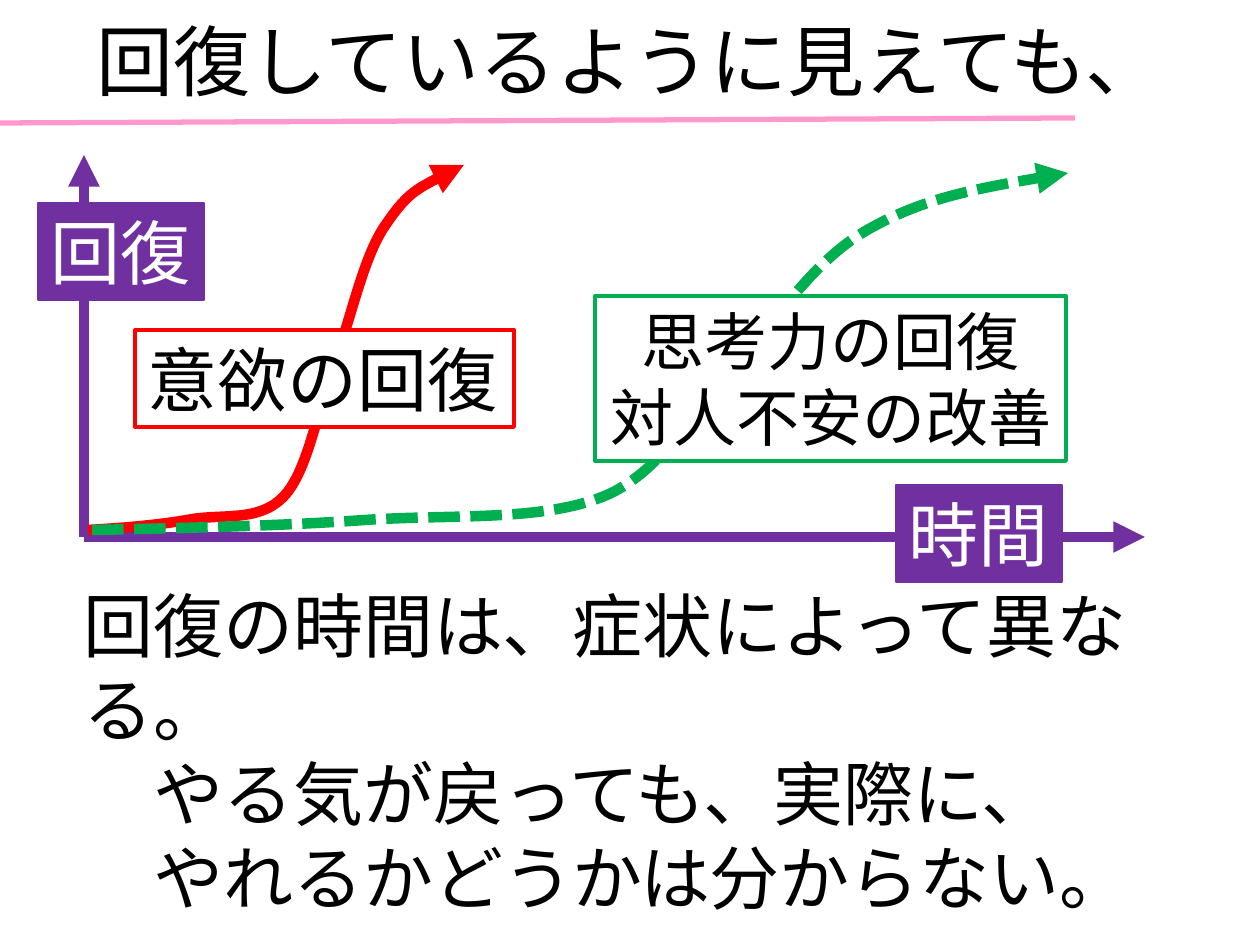
"""Build a slide that sketches how motivation and thinking recover over time."""
from lxml import etree
from pptx import Presentation
from pptx.dml.color import RGBColor
from pptx.enum.dml import MSO_LINE
from pptx.enum.shapes import MSO_CONNECTOR, MSO_SHAPE
from pptx.enum.text import MSO_ANCHOR, PP_ALIGN
from pptx.oxml.ns import qn
from pptx.util import Pt

PX = 7257
STRAIGHT = MSO_CONNECTOR.STRAIGHT
RECTANGLE = MSO_SHAPE.RECTANGLE
MIDDLE = MSO_ANCHOR.MIDDLE
LEFT, CENTER = PP_ALIGN.LEFT, PP_ALIGN.CENTER
DOTTED = MSO_LINE.SQUARE_DOT
COLORS = {
    "black": "000000",
    "white": "FFFFFF",
    "pink": "FF99CC",
    "purple": "7030A0",
    "red": "FF0000",
    "green": "00B050",
}


def style_line(shape, color, width, arrow=False):
    shape.line.color.rgb = RGBColor.from_string(COLORS[color])
    shape.line.width = Pt(width)
    if arrow:
        etree.SubElement(shape.line._get_or_add_ln(), qn("a:tailEnd"), type="triangle")


def write_text(shape, lines, size, font, color, alignment=LEFT):
    frame = shape.text_frame
    frame.vertical_anchor = MIDDLE
    frame.text = "\n".join(lines)
    for paragraph in frame.paragraphs:
        paragraph.alignment = alignment
        paragraph.font.size = Pt(size)
        paragraph.font.name = font
        paragraph.font.color.rgb = RGBColor.from_string(COLORS[color])
        for run in paragraph.runs:
            properties = run._r.get_or_add_rPr()
            for tag in ("a:latin", "a:ea"):
                etree.SubElement(properties, qn(tag), typeface=font)


presentation = Presentation()
presentation.slide_width = 1260 * PX
presentation.slide_height = 945 * PX
slide = presentation.slides.add_slide(presentation.slide_layouts[6])
shapes = slide.shapes

straight_lines = [
    (0, 123, 1075, 118, "pink", 3, False),
    (84, 537, 1145, 537, "purple", 6, True),
    (84, 537, 84, 155, "purple", 6, True),
]
for x1, y1, x2, y2, color, width, arrow in straight_lines:
    connector = shapes.add_connector(STRAIGHT, x1 * PX, y1 * PX, x2 * PX, y2 * PX)
    style_line(connector, color, width, arrow)
    etree.SubElement(connector._element.spPr, qn("a:effectLst"))

title = shapes.add_textbox(84 * PX, 0, 1157 * PX, 120 * PX)
title.text_frame.word_wrap = True
write_text(title, ["回復しているように見えても、"], 44, "Noto Sans CJK JP", "black")

message = shapes.add_textbox(71 * PX, 606 * PX, 1133 * PX, 289 * PX)
message.text_frame.word_wrap = True
message_lines = [
    "回復の時間は、症状によって異なる。",
    "やる気が戻っても、実際に、",
    "やれるかどうかは分からない。",
]
write_text(message, message_lines, 40, "Noto Sans CJK JP", "black")
for paragraph in message.text_frame.paragraphs:
    paragraph.line_spacing = Pt(48)
for paragraph in message.text_frame.paragraphs[1:]:
    paragraph._p.get_or_add_pPr().set("marL", str(Pt(40)))

motivation_points = [
    (88, 530), (125, 528), (160, 525), (193, 519),
    (227, 514), (262, 522), (286, 494),
    (310, 466), (320, 398), (338, 353),
    (354, 307), (365, 253), (387, 223),
    (408, 192), (436, 178), (464, 165),
]
thinking_points = [
    (92, 530), (186, 528), (280, 526), (365, 520),
    (452, 514), (544, 522), (607, 495),
    (669, 467), (697, 401), (740, 357),
    (784, 312), (814, 260), (869, 229),
    (924, 198), (995, 185), (1068, 173),
]
for points, color, dash in [(motivation_points, "red", None), (thinking_points, "green", DOTTED)]:
    builder = shapes.build_freeform(*points[0], scale=PX)
    builder.add_line_segments(points[1:], close=False)
    curve = builder.convert_to_shape()
    curve.shadow.inherit = False
    curve.fill.background()
    curve.line.dash_style = dash
    style_line(curve, color, 6, True)
    outline = curve._element.find(".//" + qn("a:path"))
    segments = outline.findall(qn("a:lnTo"))
    for start in range(0, len(segments), 3):
        bezier = etree.SubElement(outline, qn("a:cubicBezTo"))
        for segment in segments[start:start + 3]:
            bezier.append(segment[0])
            outline.remove(segment)

labels = [
    (135, 330, 379, 97, ["意欲の回復"], 40, "white", "red", 2.25, "black", LEFT),
    (595, 296, 471, 165, ["思考力の回復", "対人不安の改善"], 36, "white", "green", 2.25, "black", CENTER),
    (896, 485, 166, 97, ["時間"], 40, "purple", "purple", 0.75, "white", LEFT),
    (38, 203, 166, 97, ["回復"], 40, "purple", "purple", 0.75, "white", LEFT),
]
for left, top, width, height, lines, size, fill, border, weight, ink, alignment in labels:
    label = shapes.add_shape(RECTANGLE, left * PX, top * PX, width * PX, height * PX)
    label.shadow.inherit = False
    label.fill.solid()
    label.fill.fore_color.rgb = RGBColor.from_string(COLORS[fill])
    style_line(label, border, weight)
    label.text_frame.word_wrap = False
    write_text(label, lines, size, "Cabin", ink, alignment)

presentation.save("out.pptx")
